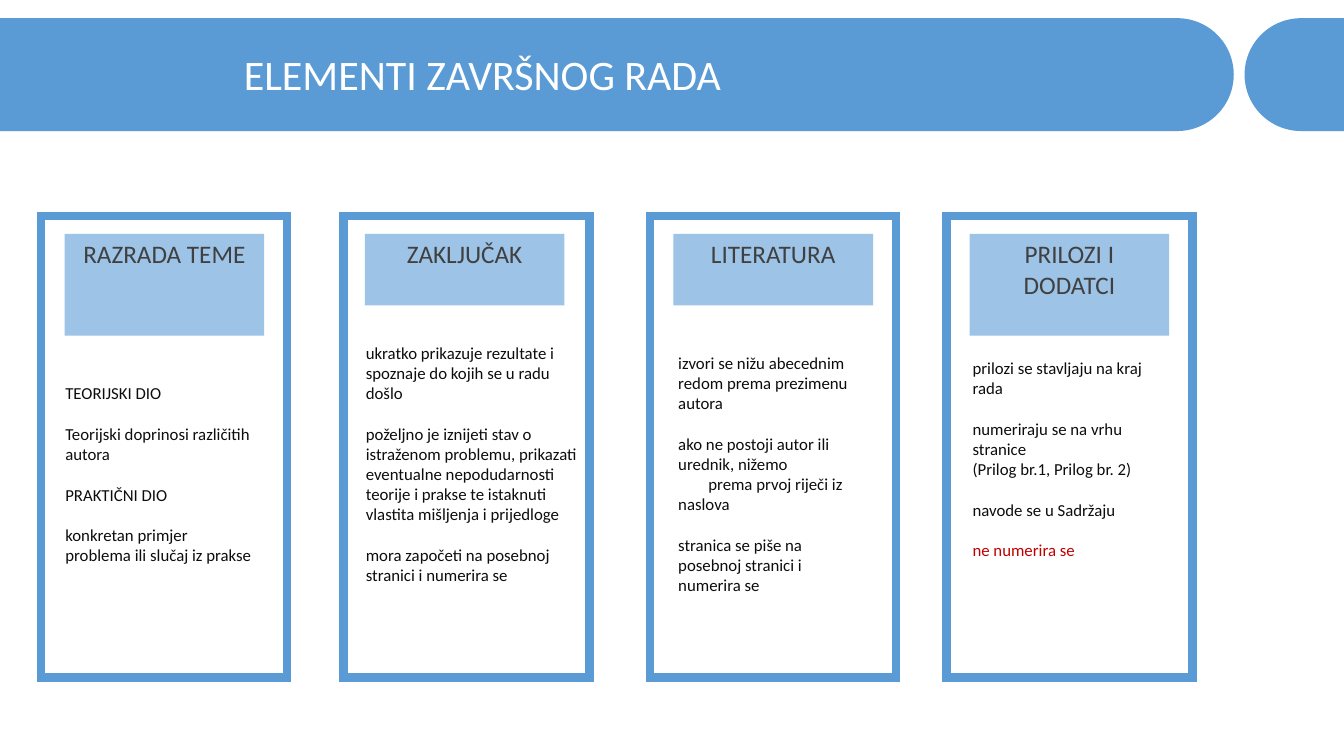
"""Build the slide that lists the elements of a final paper in four columns."""
from dataclasses import dataclass
from math import cos, pi, sin

from lxml import etree
from pptx import Presentation
from pptx.dml.color import RGBColor
from pptx.enum.shapes import MSO_SHAPE
from pptx.enum.text import MSO_ANCHOR, MSO_AUTO_SIZE, PP_ALIGN
from pptx.oxml.ns import qn
from pptx.util import Pt

RECTANGLE = MSO_SHAPE.RECTANGLE
TOP, MIDDLE = MSO_ANCHOR.TOP, MSO_ANCHOR.MIDDLE
FIXED = MSO_AUTO_SIZE.NONE
LEFT, CENTER = PP_ALIGN.LEFT, PP_ALIGN.CENTER

BLUE, PALE_BLUE, WHITE = "5B9BD5", "9DC3E6", "FFFFFF"
GREY, BLACK, RED = "404040", "0D0D0D", "C00000"
FONT = "Calibri"
SLIDE_WIDTH, SLIDE_HEIGHT = 960, 540
BAND_TOP, BAND_BOTTOM = 13, 93.6
BAND_RADIUS = (BAND_BOTTOM - BAND_TOP) / 2
PANEL_TOP, PANEL_WIDTH, PANEL_HEIGHT = 154.1, 175.7, 329.8
HEADING_TOP, HEADING_WIDTH = 167, 142.6
SHORT_HEADING, TALL_HEADING = 51.1, 72.7
BODY_GAP = 14.6


@dataclass
class Line:
    """One paragraph of a column's text."""
    text: str
    gap: float = BODY_GAP
    color: str = BLACK
    indent: float = 0


@dataclass
class Column:
    """One framed column; box is left, top, width and height of its text."""
    left: float
    heading: str
    heading_left: float
    heading_height: float
    box: tuple[float, float, float, float]
    lines: list[Line]


COLUMNS = [
    Column(29.5, "RAZRADA TEME", 46.1, TALL_HEADING, (39.6, 270, 149, 152.6), [
        Line("TEORIJSKI DIO", gap=0),
        Line("Teorijski doprinosi različitih autora"),
        Line("PRAKTIČNI DIO"),
        Line("konkretan primjer"),
        Line("problema ili slučaj iz prakse", gap=0),
    ]),
    Column(245.5, "ZAKLJUČAK", 260.6, SHORT_HEADING, (254.2, 241.2, 167, 196.6), [
        Line("ukratko prikazuje rezultate i spoznaje do kojih se u radu došlo", gap=0),
        Line("poželjno je iznijeti stav o istraženom problemu, prikazati eventualne "
             "nepodudarnosti teorije i prakse te istaknuti vlastita mišljenja i prijedloge"),
        Line("mora započeti na posebnoj stranici i numerira se"),
    ]),
    Column(464.4, "LITERATURA", 481, SHORT_HEADING, (477.4, 248.4, 149, 181.4), [
        Line("izvori se nižu abecednim redom prema prezimenu autora", gap=0),
        Line("ako ne postoji autor ili urednik, nižemo"),
        Line("prema prvoj riječi iz naslova", gap=0, indent=21.5),
        Line("stranica se piše na posebnoj stranici i numerira se"),
    ]),
    Column(676.1, "PRILOZI I DODATCI", 692.6, TALL_HEADING, (687.6, 252, 147.6, 167), [
        Line("prilozi se stavljaju na kraj rada", gap=0),
        Line("numeriraju se na vrhu stranice"),
        Line("(Prilog br.1, Prilog br. 2)", gap=0),
        Line("navode se u Sadržaju"),
        Line("ne numerira se", color=RED),
    ]),
]


def set_color(color_format, value: str) -> None:
    """Give a font, line or fill colour its hex value."""
    color_format.rgb = RGBColor.from_string(value)


def paint(shape, fill: str | None = None, line: str | None = None, width: float = 0) -> None:
    """Set a shape's fill and square-cornered outline and take its shadow away."""
    shape.shadow.inherit = False
    if fill:
        shape.fill.solid()
        set_color(shape.fill.fore_color, fill)
    else:
        shape.fill.background()
    if line:
        shape.line.width = Pt(width)
        set_color(shape.line.color, line)
        outline = shape._element.spPr.find(qn("a:ln"))
        etree.SubElement(outline, qn("a:miter"), lim="800000")
    else:
        shape.line.fill.background()


def write(para, text: str, *, size: float, color: str, align=LEFT,
          gap: float = 0, spacing: float = 1, indent: float = 0) -> None:
    """Write text into a paragraph with the given format."""
    para.alignment = align
    para.space_before = Pt(gap)
    para.line_spacing = spacing
    if indent:
        para._p.get_or_add_pPr().set("indent", str(Pt(indent)))
    span = para.add_run()
    span.text = text
    span.font.name = FONT
    span.font.size = Pt(size)
    set_color(span.font.color, color)


def prepare_frame(frame, anchor) -> None:
    """Make a text frame wrap, keep its size and anchor its text."""
    frame.word_wrap = True
    frame.auto_size = FIXED
    frame.vertical_anchor = anchor


def draw_band(page, flat_x: float, round_x: float) -> None:
    """Draw a header band with one flat end and one round end."""
    side = 1 if round_x > flat_x else -1
    center_x = round_x - side * BAND_RADIUS
    center_y = BAND_TOP + BAND_RADIUS
    angles = [-pi / 2 + pi * step / 60 for step in range(61)]
    arc = [(Pt(center_x + side * BAND_RADIUS * cos(angle)),
            Pt(center_y + BAND_RADIUS * sin(angle))) for angle in angles]
    builder = page.shapes.build_freeform(Pt(flat_x), Pt(BAND_TOP), scale=1.0)
    builder.add_line_segments([*arc, (Pt(flat_x), Pt(BAND_BOTTOM))], close=True)
    paint(builder.convert_to_shape(), BLUE)


def draw_title(page, text: str) -> None:
    """Fill the title placeholder and bring it in front of the header band."""
    title = page.shapes.title
    title.left, title.top, title.width, title.height = Pt(167), Pt(26.6), Pt(769.7), Pt(56.9)
    prepare_frame(title.text_frame, MIDDLE)
    write(title.text_frame.paragraphs[0], text, size=30, color=WHITE, gap=10, spacing=0.9)
    title._element.getparent().append(title._element)


def draw_column(page, column: Column) -> None:
    """Draw a column's frame, heading and text."""
    panel = page.shapes.add_shape(RECTANGLE, Pt(column.left), Pt(PANEL_TOP),
                                  Pt(PANEL_WIDTH), Pt(PANEL_HEIGHT))
    paint(panel, line=BLUE, width=6)
    heading = page.shapes.add_shape(RECTANGLE, Pt(column.heading_left), Pt(HEADING_TOP),
                                    Pt(HEADING_WIDTH), Pt(column.heading_height))
    paint(heading, PALE_BLUE)
    prepare_frame(heading.text_frame, TOP)
    write(heading.text_frame.paragraphs[0], column.heading, size=18, color=GREY, align=CENTER)
    frame = page.shapes.add_textbox(*map(Pt, column.box)).text_frame
    prepare_frame(frame, TOP)
    for index, line in enumerate(column.lines):
        para = frame.add_paragraph() if index else frame.paragraphs[0]
        write(para, line.text, size=12, color=line.color, gap=line.gap, indent=line.indent)


def main() -> None:
    """Build the deck and save it."""
    deck = Presentation()
    deck.slide_width, deck.slide_height = Pt(SLIDE_WIDTH), Pt(SLIDE_HEIGHT)
    page = deck.slides.add_slide(deck.slide_layouts[5])
    draw_band(page, 0, 881.3)
    draw_band(page, SLIDE_WIDTH, 889)
    draw_title(page, "ELEMENTI ZAVRŠNOG RADA")
    for column in COLUMNS:
        draw_column(page, column)
    deck.save("out.pptx")


if __name__ == "__main__":
    main()
